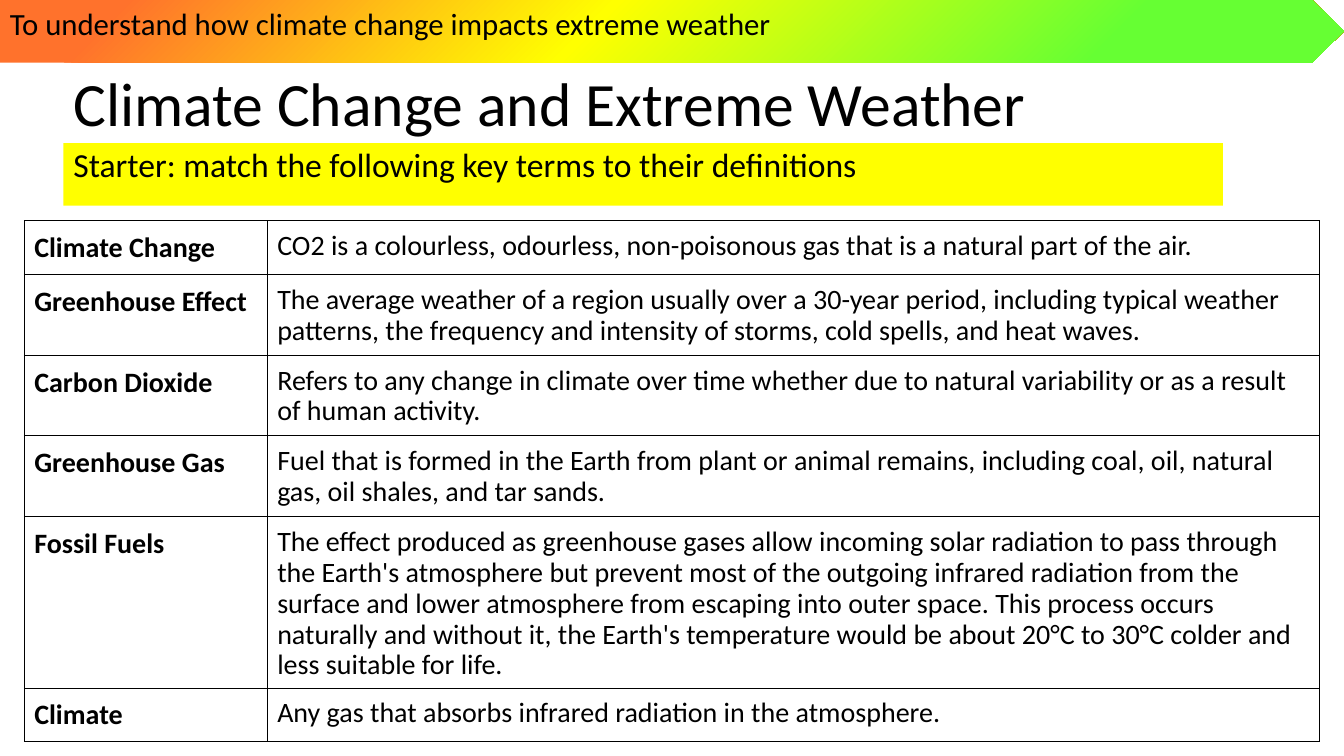
from lxml import etree
from pptx import Presentation
from pptx import util as u
from pptx.dml.color import RGBColor
from pptx.enum import shapes, text
from pptx.oxml import ns, parse_xml

THEME = {
    "font": "Calibri", "ink": "000000", "highlight": "FFFF00",
    "title": 44, "starter": 24, "objective": 22, "table": 20, "border": 0.75,
    "gradient": [(0, "66FF33"), (18, "66FF33"), (56, "FFFF00"),
                 (91, "FF722C"), (100, "FF722C")],
}
W, H = 13.33, 7.5
LEFT, WIDTH = 0.63, 11.5  # column shared by the title and the starter
BAR = 0.62                # height of the arrow and the starter bar

KEY_TERMS = [
    ("Climate Change", "CO2 is a colourless, odourless, non-poisonous gas that is "
     "a natural part of the air.", 0.48),
    ("Greenhouse Effect", "The average weather of a region usually over a 30-year "
     "period, including typical weather patterns, the frequency and intensity of "
     "storms, cold spells, and heat waves.", 0.73),
    ("Carbon Dioxide", "Refers to any change in climate over time whether due to "
     "natural variability or as a result of human activity.", 0.7),
    ("Greenhouse Gas", "Fuel that is formed in the Earth from plant or animal "
     "remains, including coal, oil, natural gas, oil shales, and tar sands.", 0.7),
    ("Fossil Fuels", "The effect produced as greenhouse gases allow incoming solar "
     "radiation to pass through the Earth's atmosphere but prevent most of the "
     "outgoing infrared radiation from the surface and lower atmosphere from "
     "escaping into outer space. This process occurs naturally and without it, the "
     "Earth's temperature would be about 20°C to 30°C colder and less suitable for "
     "life.", 1.22),
    ("Climate", "Any gas that absorbs infrared radiation in the atmosphere.", 0.48),
]


def write(tf, words, size, bold=False, spacing=None, anchor=text.MSO_ANCHOR.TOP):
    tf.word_wrap = True
    tf.vertical_anchor = anchor
    p = tf.paragraphs[0]
    p.alignment = text.PP_ALIGN.LEFT
    p.line_spacing = spacing
    r = p.add_run()
    r.text = words
    r.font.name = THEME["font"]
    r.font.size = u.Pt(size)
    r.font.bold = bold
    r.font.color.rgb = RGBColor.from_string(THEME["ink"])


prs = Presentation()
prs.slide_width, prs.slide_height = u.Inches(W), u.Inches(H)
slide = prs.slides.add_slide(prs.slide_layouts[6])

# Title
sp = slide.shapes.add_textbox(*map(u.Inches, (LEFT, 0.57, WIDTH, 0.97)))
write(sp.text_frame, "Climate Change and Extreme Weather", THEME["title"],
      spacing=0.9, anchor=text.MSO_ANCHOR.MIDDLE)

# Starter task
sp = slide.shapes.add_textbox(*map(u.Inches, (LEFT, 1.42, WIDTH, BAR)))
sp.fill.solid()
sp.fill.fore_color.rgb = RGBColor.from_string(THEME["highlight"])
write(sp.text_frame, "Starter: match the following key terms to their definitions",
      THEME["starter"], spacing=0.9)

# Learning objective arrow with a radial gradient from its bottom right corner
sp = slide.shapes.add_shape(shapes.MSO_SHAPE.RIGHT_ARROW, 0, 0,
                            u.Inches(W), u.Inches(BAR))
sp.adjustments[0], sp.adjustments[1] = 1, 0.51
sp.shadow.inherit = False
sp.line.fill.background()
stops = "".join(f'<a:gs pos="{pos * 1000}"><a:srgbClr val="{color}"/></a:gs>'
                for pos, color in THEME["gradient"])
sp._element.spPr.insert(2, parse_xml(
    f'<a:gradFill {ns.nsdecls("a")}><a:gsLst>{stops}</a:gsLst>'
    '<a:path path="circle"><a:fillToRect l="100000" t="100000"/></a:path>'
    '<a:tileRect r="-100000" b="-100000"/></a:gradFill>'))
write(sp.text_frame, "To understand how climate change impacts extreme weather",
      THEME["objective"])

# Key terms table
columns = (2.41, 10.44)
heights = [height for _, _, height in KEY_TERMS]
table = slide.shapes.add_table(len(KEY_TERMS), len(columns), *map(
    u.Inches, (0.24, 2.19, sum(columns), sum(heights)))).table
table.first_row = table.horz_banding = False
for column, width in zip(table.columns, columns):
    column.width = u.Inches(width)

for row, (term, definition, height) in enumerate(KEY_TERMS):
    table.rows[row].height = u.Inches(height)
    for col, words in enumerate((term, definition)):
        cell = table.cell(row, col)
        cell.margin_left = cell.margin_right = u.Inches(0.1)
        cell.margin_top = cell.margin_bottom = u.Inches(0.1)
        write(cell.text_frame, words, THEME["table"], bold=col == 0,
              spacing=0.9 if col else None)
        # Borders come before the fill in the cell properties
        tcPr = cell._tc.get_or_add_tcPr()
        for side in ("lnL", "lnR", "lnT", "lnB"):
            ln = etree.SubElement(tcPr, ns.qn(f"a:{side}"),
                                  w=str(u.Pt(THEME["border"])))
            fill = etree.SubElement(ln, ns.qn("a:solidFill"))
            etree.SubElement(fill, ns.qn("a:srgbClr"), val=THEME["ink"])
        cell.fill.background()

prs.save("out.pptx")
